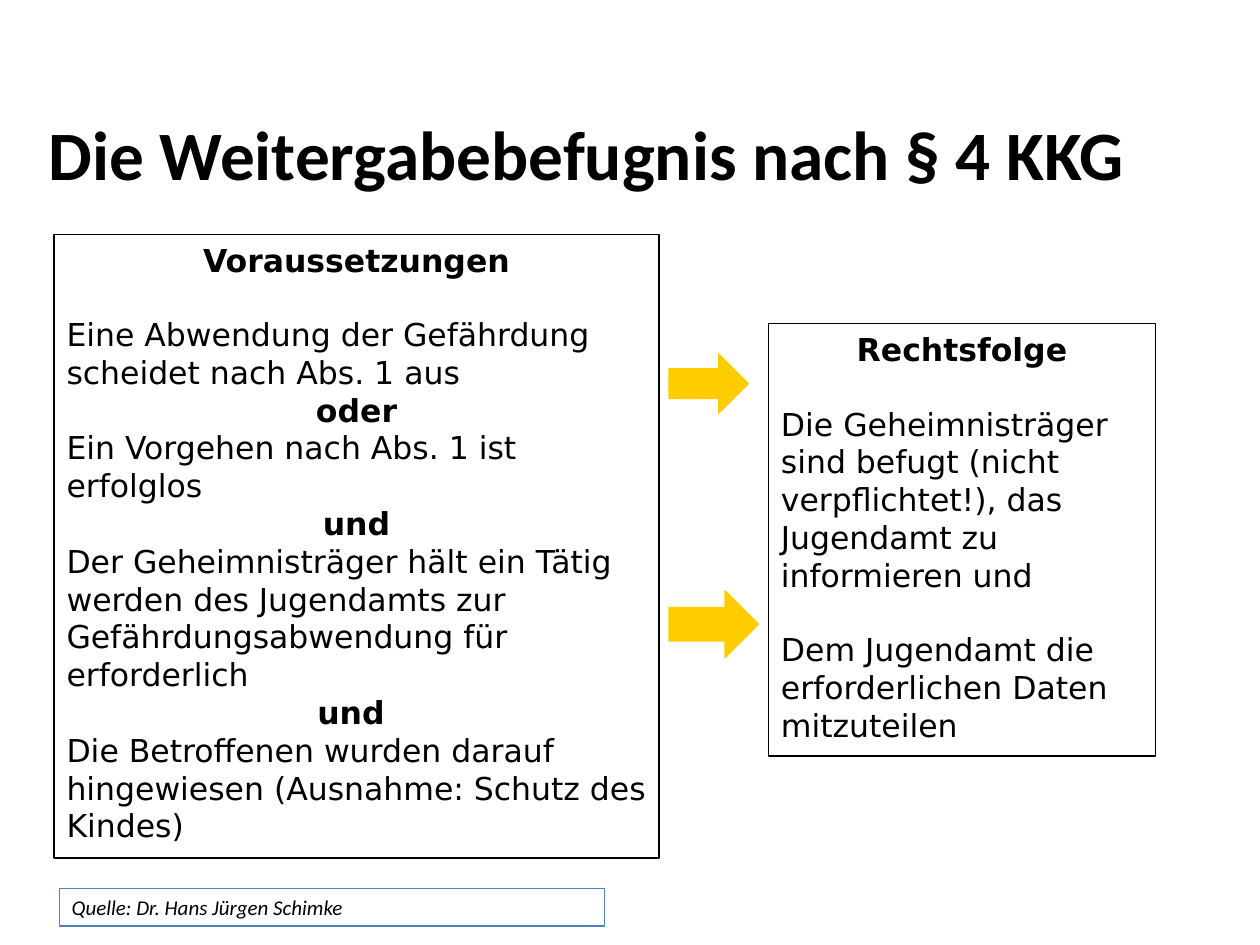
from pptx import Presentation
from pptx.dml.color import RGBColor
from pptx.enum.shapes import MSO_SHAPE
from pptx.enum.text import MSO_ANCHOR, PP_ALIGN
from pptx.util import Inches, Pt

BLACK = RGBColor(0x00, 0x00, 0x00)
YELLOW = RGBColor(0xFF, 0xCC, 0x00)
BLUE = RGBColor(0x4F, 0x81, 0xBD)
BLANK_LINE = 21


def write(paragraph, text, font="DejaVu Sans", size=18, bold=False, italic=False,
          align=PP_ALIGN.LEFT, space_after=0):
    paragraph.alignment = align
    paragraph.space_after = Pt(space_after)
    run = paragraph.add_run()
    run.text = text
    run.font.name = font
    run.font.size = Pt(size)
    run.font.bold = bold
    run.font.italic = italic
    run.font.color.rgb = BLACK


def add_outlined(shapes, kind, left, top, width, height, line, fill=None):
    shape = shapes.add_shape(kind, Inches(left), Inches(top), Inches(width), Inches(height))
    shape.shadow.inherit = False
    shape.line.color.rgb = line
    shape.line.width = Pt(0.75)
    if fill is None:
        shape.fill.background()
    else:
        shape.fill.solid()
        shape.fill.fore_color.rgb = fill
    shape.text_frame.word_wrap = True
    shape.text_frame.vertical_anchor = MSO_ANCHOR.TOP
    return shape


presentation = Presentation()
presentation.slide_width = Inches(10)
presentation.slide_height = Inches(7.5)
slide = presentation.slides.add_slide(presentation.slide_layouts[6])

# Title
title = slide.shapes.add_textbox(Inches(0.28), Inches(0.66), Inches(8.75), Inches(1.1))
title.text_frame.word_wrap = True
title.text_frame.vertical_anchor = MSO_ANCHOR.MIDDLE
write(title.text_frame.paragraphs[0], "Die Weitergabebefugnis nach § 4 KKG",
      font="Calibri", size=39.6, bold=True, align=PP_ALIGN.CENTER)

# Conditions and legal consequence: bold centred words, plain sentences
# Each entry: text, is heading, space after
boxes = [
    ((0.43, 1.86, 4.8, 4.95), [
        ("Voraussetzungen", True, BLANK_LINE),
        ("Eine Abwendung der Gefährdung scheidet nach Abs. 1 aus", False, 0),
        ("oder", True, 0),
        ("Ein Vorgehen nach Abs. 1 ist erfolglos", False, 0),
        ("und", True, 0),
        ("Der Geheimnisträger hält ein Tätig werden des Jugendamts zur "
         "Gefährdungsabwendung für erforderlich", False, 0),
        ("und ", True, 0),
        ("Die Betroffenen wurden darauf hingewiesen (Ausnahme: Schutz des Kindes)", False, 0),
    ]),
    ((6.1, 2.57, 3.07, 3.43), [
        ("Rechtsfolge", True, BLANK_LINE),
        ("Die Geheimnisträger sind befugt (nicht verpflichtet!), das Jugendamt "
         "zu informieren und", False, BLANK_LINE),
        ("Dem Jugendamt die erforderlichen Daten mitzuteilen", False, 0),
    ]),
]
for position, entries in boxes:
    frame = add_outlined(slide.shapes, MSO_SHAPE.RECTANGLE, *position, line=BLACK).text_frame
    for index, (text, heading, space_after) in enumerate(entries):
        paragraph = frame.add_paragraph() if index else frame.paragraphs[0]
        write(paragraph, text, bold=heading, space_after=space_after,
              align=PP_ALIGN.CENTER if heading else PP_ALIGN.LEFT)

# Arrows from conditions to consequence
for top, width, height in [(2.81, 0.63, 0.47), (4.69, 0.71, 0.53)]:
    add_outlined(slide.shapes, MSO_SHAPE.RIGHT_ARROW, 5.31, top, width, height,
                 line=YELLOW, fill=YELLOW)

# Source note
source = add_outlined(slide.shapes, MSO_SHAPE.RECTANGLE, 0.47, 7.05, 4.33, 0.3, line=BLUE)
write(source.text_frame.paragraphs[0], "Quelle: Dr. Hans Jürgen Schimke",
      font="Calibri", size=12, italic=True)

presentation.save("out.pptx")
